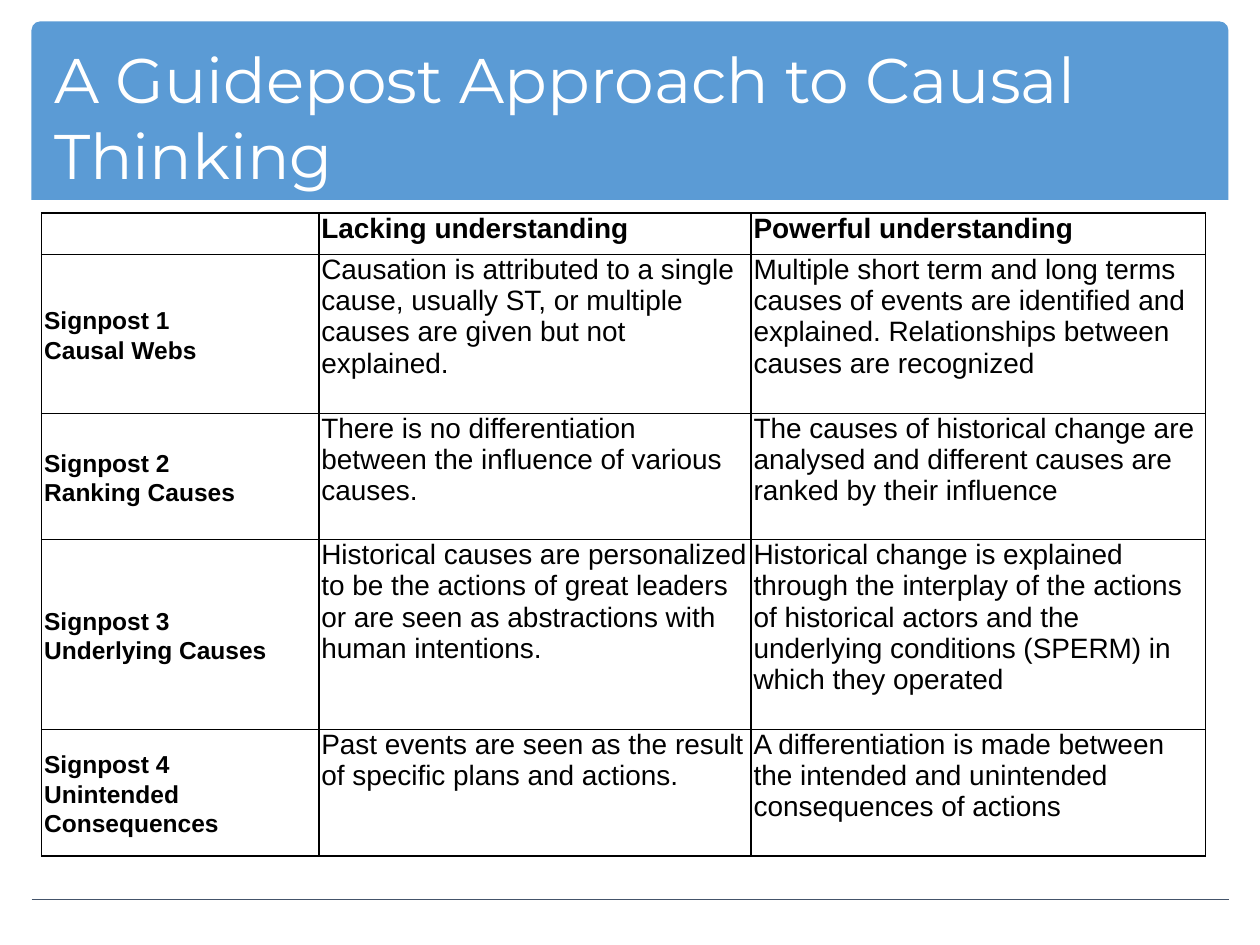
import pptx
import pptx.dml.color
import pptx.enum.shapes
import pptx.enum.text
import pptx.oxml
import pptx.oxml.ns
import pptx.util

Pt = pptx.util.Pt
ANCHOR = pptx.enum.text.MSO_ANCHOR
ALIGN = pptx.enum.text.PP_ALIGN


def color(value):
    return pptx.dml.color.RGBColor.from_string(value)


def write(paragraph, text, size=16, font="Arial", fill="000000", bold=False,
          align=ALIGN.LEFT, spacing=None):
    paragraph.alignment = align
    paragraph.line_spacing = spacing
    run = paragraph.add_run()
    run.text = text
    run.font.size = Pt(size)
    run.font.name = font
    run.font.bold = bold
    run.font.color.rgb = color(fill)


presentation = pptx.Presentation()
presentation.slide_width = Pt(720)
presentation.slide_height = Pt(540)
slide = presentation.slides.add_slide(presentation.slide_layouts[5])

title = slide.shapes.title
title.left, title.top, title.width, title.height = Pt(23.76), Pt(21.6), Pt(658), Pt(90)
title.text_frame.vertical_anchor = ANCHOR.MIDDLE
title.text_frame.word_wrap = True
title.text_frame.auto_size = pptx.enum.text.MSO_AUTO_SIZE.NONE
write(title.text_frame.paragraphs[0], "A Guidepost Approach to Causal Thinking",
      size=36, font="Montserrat", fill="FFFFFF")

band = slide.shapes.add_shape(pptx.enum.shapes.MSO_SHAPE.ROUND_2_SAME_RECTANGLE,
                              Pt(18), Pt(12.24), Pt(684), Pt(102))
band.adjustments[0] = 0.05
band.adjustments[1] = 0
band.shadow.inherit = False
band.fill.solid()
band.fill.fore_color.rgb = color("5B9BD5")
band.line.fill.background()
title._element.addprevious(band._element)

footer_line = slide.shapes.add_connector(pptx.enum.shapes.MSO_CONNECTOR.STRAIGHT,
                                         Pt(18), Pt(514), Pt(702), Pt(514))
footer_line.line.color.rgb = color("44546A")
footer_line.line.width = Pt(1)
footer_line._element.spPr.append(pptx.oxml.parse_xml(
    f'<a:effectLst {pptx.oxml.ns.nsdecls("a")}/>'))

headings = ["", "Lacking understanding", "Powerful understanding"]
signposts = [
    ("Causal Webs",
     "Causation is attributed to a single cause, usually ST, or multiple causes are given but not explained.",
     "Multiple short term and long terms causes of events are identified and explained. "
     "Relationships between causes are recognized"),
    ("Ranking Causes",
     "There is no differentiation between the influence of various causes.",
     "The causes of historical change are analysed and different causes are ranked by their influence"),
    ("Underlying Causes",
     "Historical causes are personalized to be the actions of great leaders "
     "or are seen as abstractions with human intentions.",
     "Historical change is explained through the interplay of the actions of historical actors "
     "and the underlying conditions (SPERM) in which they operated"),
    ("Unintended Consequences",
     "Past events are seen as the result of specific plans and actions.",
     "A differentiation is made between the intended and unintended consequences of actions"),
]
column_widths = [158.4, 247, 259.6]
row_heights = [23.76, 90.72, 72.2, 108.5, 72.2]

table = slide.shapes.add_table(len(row_heights), len(column_widths), Pt(23.76), Pt(121.7),
                               Pt(sum(column_widths)), Pt(sum(row_heights))).table
table.first_row = False
table.horz_banding = False
for column, width in zip(table.columns, column_widths):
    column.width = Pt(width)
for row, height in zip(table.rows, row_heights):
    row.height = Pt(height)

for row_index, texts in enumerate([headings, *signposts]):
    for column_index, text in enumerate(texts):
        cell = table.cell(row_index, column_index)
        cell.margin_left = cell.margin_right = Pt(1.5)
        cell.margin_top = cell.margin_bottom = Pt(0)
        for side in ("lnL", "lnR", "lnT", "lnB"):
            cell._tc.get_or_add_tcPr().append(pptx.oxml.parse_xml(
                f'<a:{side} {pptx.oxml.ns.nsdecls("a")} w="{Pt(1)}"><a:solidFill>'
                f'<a:srgbClr val="000000"/></a:solidFill></a:{side}>'))
        cell.fill.solid()
        cell.fill.fore_color.rgb = color("FFFFFF")
        paragraph = cell.text_frame.paragraphs[0]
        if row_index > 0 and column_index == 0:
            cell.vertical_anchor = ANCHOR.MIDDLE
            write(paragraph, f"Signpost {row_index}", size=14, bold=True,
                  align=ALIGN.JUSTIFY, spacing=Pt(18))
            write(cell.text_frame.add_paragraph(), text, size=14, bold=True,
                  align=ALIGN.JUSTIFY, spacing=1.07)
        elif text:
            write(paragraph, text, bold=row_index == 0)

presentation.save("out.pptx")
